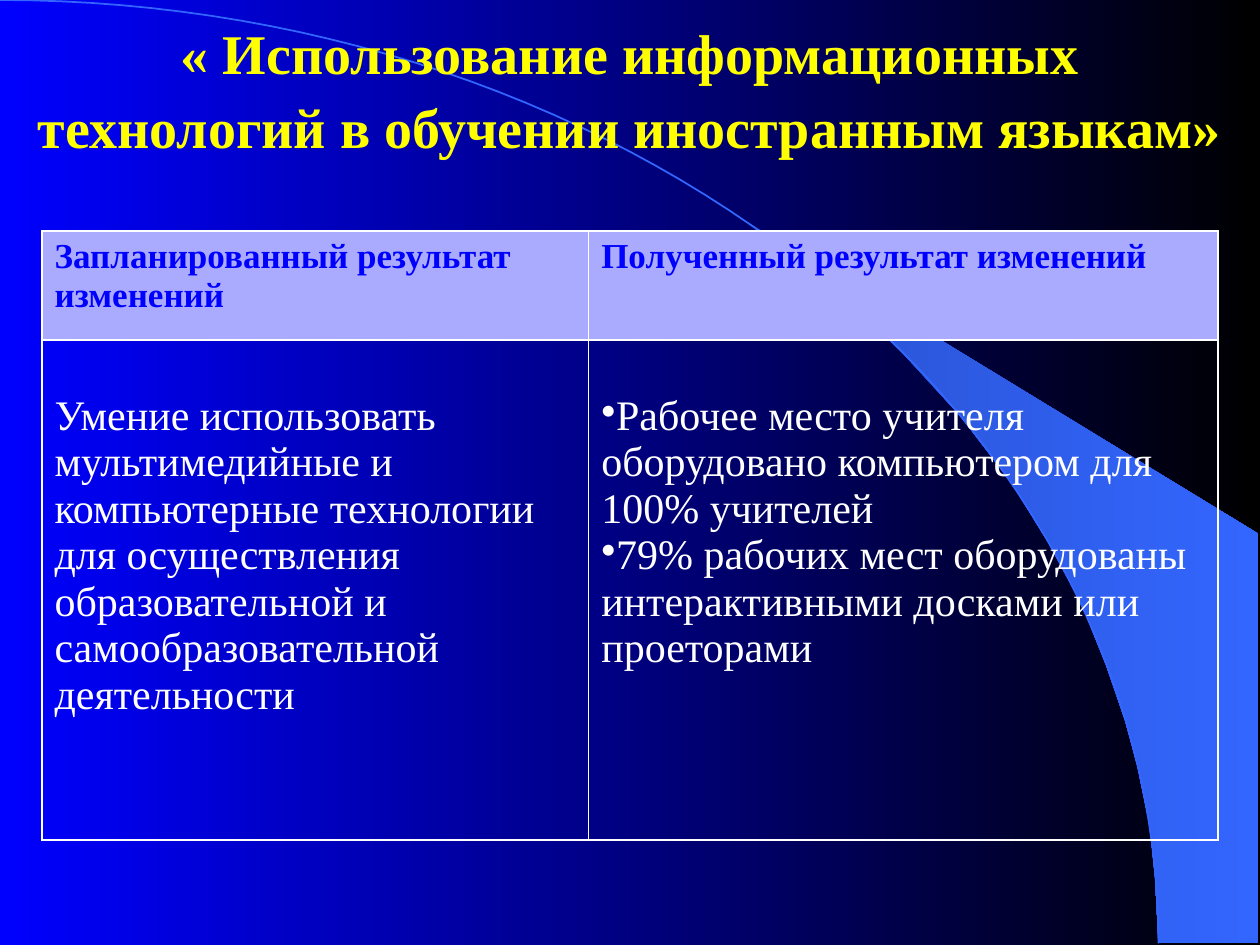
from math import cos, pi, sin

from lxml.etree import SubElement
from pptx import Presentation
from pptx.dml.color import RGBColor
from pptx.enum.text import PP_ALIGN
from pptx.oxml.ns import qn
from pptx.util import Pt

# Content
TITLE = "« Использование информационных технологий в обучении иностранным языкам»"
HEADS = ["Запланированный результат изменений", "Полученный результат изменений"]
GOAL = ["Умение использовать мультимедийные и компьютерные технологии для "
        "осуществления образовательной и самообразовательной деятельности"]
RESULTS = ["Рабочее место учителя оборудовано компьютером для 100% учителей",
           "79% рабочих мест оборудованы интерактивными досками или проеторами"]

# Layout, in points
COLS, ROWS = [312.4, 359.6], [62.4, 285.6]
ARC = (662, 539)
SWOOSH = [(662, 539), (719, 539), (719, 305), (424, 125), (449, 143),
          (470, 160), (493, 180), (516, 202), (549, 238), (578, 276),
          (599, 310), (618, 345), (632, 380), (643, 412), (650, 438),
          (657, 472), (660, 501)]


class Theme:
    font = "Times New Roman"
    title, head, body = 32, 20, 24
    blue, black, white, yellow = "0000FF", "000000", "FFFFFF", "FFFF00"
    pale, sky, deep = "AAAAFF", "3366FF", "2851CC"


def rgb(code):
    return RGBColor.from_string(code)


def blend(fill, *codes):
    fill.gradient()
    fill.gradient_angle = 0
    for stop, code in zip(fill.gradient_stops, codes):
        stop.color.rgb = rgb(code)


def write(frame, lines, size, color, bold=False, align=PP_ALIGN.LEFT,
          space=None, bullet=None):
    frame.word_wrap = True
    for i, line in enumerate(lines):
        para = frame.add_paragraph() if i else frame.paragraphs[0]
        para.alignment, para.line_spacing = align, space
        if bullet:
            props = para._p.get_or_add_pPr()
            props.set("marL", "0")
            props.set("indent", "0")
            SubElement(props, qn("a:buChar"), char=bullet)
        run = para.add_run()
        run.text = line
        font = run.font
        font.name, font.size, font.bold = Theme.font, Pt(size), bold
        font.color.rgb = rgb(color)


def outline(slide, points, close):
    start, *rest = [(Pt(x), Pt(y)) for x, y in points]
    pen = slide.shapes.build_freeform(*start)
    pen.add_line_segments(rest, close=close)
    shape = pen.convert_to_shape()
    shape.shadow.inherit = False
    return shape


def border(cell, color, width):
    props = cell._tc.get_or_add_tcPr()
    for i, side in enumerate(("lnL", "lnR", "lnT", "lnB")):
        line = props.makeelement(qn(f"a:{side}"), {"w": str(Pt(width))})
        fill = SubElement(line, qn("a:solidFill"))
        SubElement(fill, qn("a:srgbClr"), val=color)
        props.insert(i, line)


def main():
    deck = Presentation()
    deck.slide_width, deck.slide_height = Pt(720), Pt(540)
    slide = deck.slides.add_slide(deck.slide_layouts[6])
    blend(slide.background.fill, Theme.blue, Theme.black)

    # Swoosh and quarter ellipse
    swoosh = outline(slide, SWOOSH, True)
    blend(swoosh.fill, Theme.deep, Theme.sky)
    swoosh.line.fill.background()
    wide, high = ARC
    turns = [pi / 2 * i / 60 for i in range(61)]
    arc = outline(slide, [(wide * sin(t), high * (1 - cos(t))) for t in turns], False)
    arc.fill.background()
    arc.line.color.rgb = rgb(Theme.sky)
    arc.line.width = Pt(1)

    # Table
    table = slide.shapes.add_table(2, 2, Pt(24), Pt(132), Pt(sum(COLS)),
                                   Pt(sum(ROWS))).table
    table.first_row = table.horz_banding = False
    for col, width in zip(table.columns, COLS):
        col.width = Pt(width)
    for row, height in zip(table.rows, ROWS):
        row.height = Pt(height)
    for i, (text, lines, mark) in enumerate(zip(HEADS, (GOAL, RESULTS), (None, "•"))):
        head, body = table.cell(0, i), table.cell(1, i)
        head.fill.solid()
        head.fill.fore_color.rgb = rgb(Theme.pale)
        body.fill.background()
        body.margin_top = Pt(30.2)
        write(head.text_frame, [text], Theme.head, Theme.blue, bold=True)
        write(body.text_frame, lines, Theme.body, Theme.white, bullet=mark)
        for cell in (head, body):
            border(cell, Theme.white, 1)

    # Title
    box = slide.shapes.add_textbox(Pt(12), Pt(3), Pt(696), Pt(85))
    write(box.text_frame, [TITLE], Theme.title, Theme.yellow, bold=True,
          align=PP_ALIGN.CENTER, space=1.1)

    deck.save("out.pptx")


if __name__ == "__main__":
    main()
